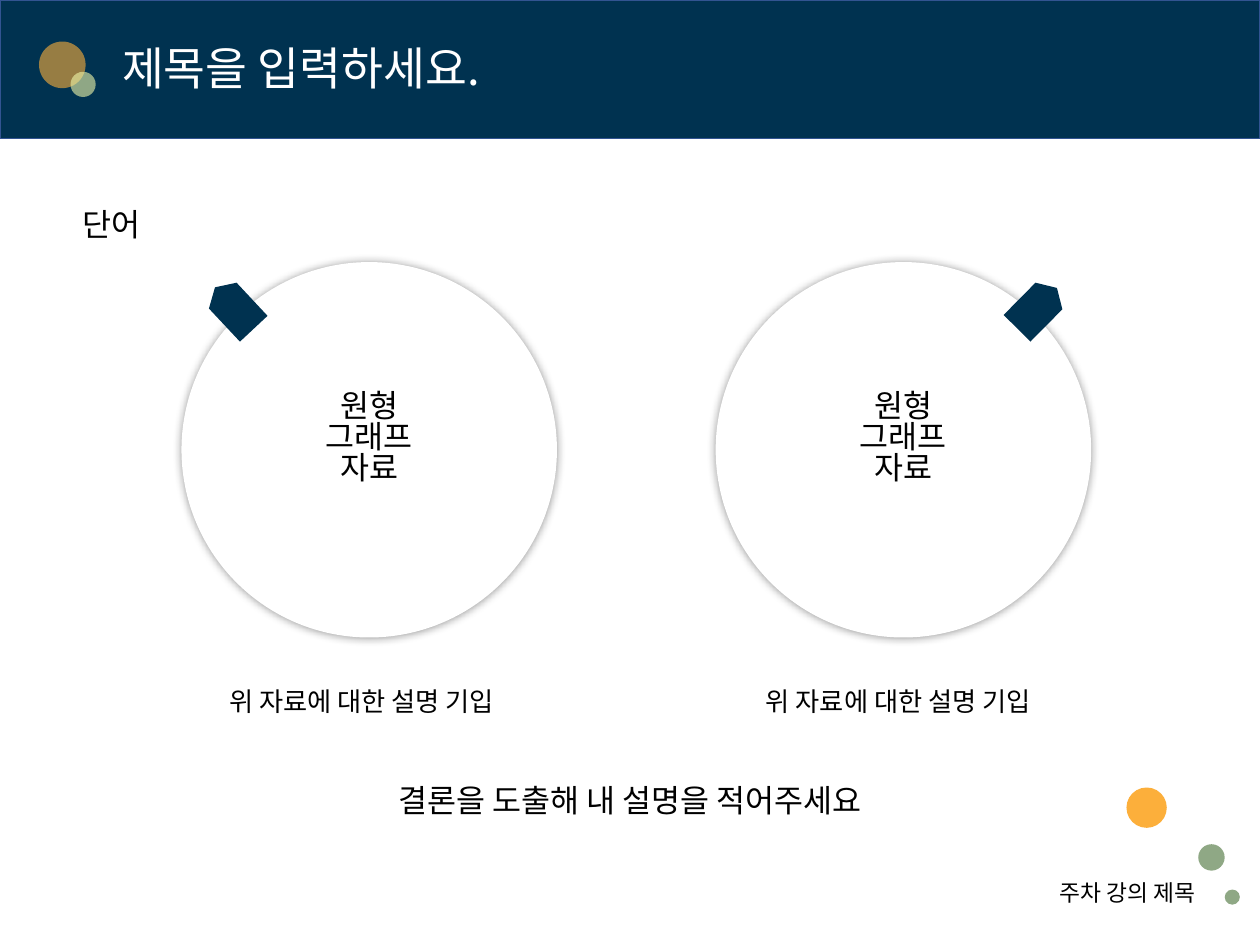
"""Build a lecture slide with two circular chart areas and a conclusion."""
from lxml import etree
from pptx import Presentation
from pptx.dml.color import RGBColor
from pptx.enum.shapes import MSO_SHAPE
from pptx.enum.text import MSO_ANCHOR, PP_ALIGN
from pptx.oxml.ns import qn
from pptx.util import Inches, Pt

FONT = "Noto Sans CJK KR"
COLORS = {"navy": "003250", "edge": "325491", "orange": "FCAF3B", "lemon": "EFF6A9",
          "green": "8FA885", "white": "FFFFFF", "black": "000000"}
TITLE = "제목을 입력하세요."
TOPIC = "단어"
CHART_LABEL = ["원형", "그래프", "자료"]
CAPTION = "위 자료에 대한 설명 기입"
CONCLUSION = "결론을 도출해 내 설명을 적어주세요"
FOOTER = "주차 강의 제목"
TITLE_DOTS = [(0.31, 0.33, 0.37, "orange"), (0.56, 0.57, 0.2, "lemon")]
CORNER_DOTS = [(8.94, 6.25, 0.32, "orange"), (9.51, 6.7, 0.21, "green"),
               (9.72, 7.06, 0.12, "green")]
CHARTS = [{"left": 1.44, "tab": 1.71, "turn": 136.9, "caption": 1.72},
          {"left": 5.68, "tab": 8.08, "turn": 224.7, "caption": 5.98}]
DIAMETER = 2.98
LABEL_WIDTH = 0.9


def rgb(name):
    return RGBColor.from_string(COLORS[name])


def add_shape(shapes, kind, box, fill, line=None, alpha=None):
    sp = shapes.add_shape(kind, *map(Inches, box))
    sp.shadow.inherit = False
    sp.fill.solid()
    sp.fill.fore_color.rgb = rgb(fill)
    if alpha:
        clr = sp.fill._xPr.find(qn("a:solidFill"))[0]
        etree.SubElement(clr, qn("a:alpha"), val=str(alpha * 1000))
    if line:
        sp.line.color.rgb = rgb(line)
        sp.line.width = Pt(1)
    else:
        sp.line.fill.background()
    return sp


def add_glow(sp, blur, alpha):
    effects = sp._element.spPr.find(qn("a:effectLst"))
    shadow = etree.SubElement(effects, qn("a:outerShdw"), blurRad=str(Pt(blur)),
                              dist="0", dir="0", algn="ctr", rotWithShape="0")
    clr = etree.SubElement(shadow, qn("a:srgbClr"), val=COLORS["black"])
    etree.SubElement(clr, qn("a:alpha"), val=str(alpha * 1000))


def add_text(shapes, lines, box, size=18, color="black", align=PP_ALIGN.LEFT,
             anchor=MSO_ANCHOR.TOP, wrap=False, spacing=0.82):
    tf = shapes.add_textbox(*map(Inches, box)).text_frame
    tf.word_wrap = wrap
    tf.vertical_anchor = anchor
    for i, line in enumerate(lines):
        p = tf.paragraphs[0] if i == 0 else tf.add_paragraph()
        p.alignment = align
        p.line_spacing = spacing
        r = p.add_run()
        r.text = line
        r.font.size = Pt(size)
        r.font.name = FONT
        r.font.color.rgb = rgb(color)
        etree.SubElement(r.font._element, qn("a:ea"), typeface=FONT)


def add_chart_area(shapes, chart):
    group = shapes.add_group_shape().shapes
    disc = add_shape(group, MSO_SHAPE.OVAL, (chart["left"], 2.08, DIAMETER, DIAMETER), "white")
    add_glow(disc, blur=5, alpha=40)
    tab = add_shape(group, MSO_SHAPE.FLOWCHART_OFFPAGE_CONNECTOR,
                    (chart["tab"], 2.22, 0.3, 0.45), "navy")
    tab.rotation = chart["turn"]
    label_left = chart["left"] + (DIAMETER - LABEL_WIDTH) / 2
    add_text(shapes, CHART_LABEL, (label_left, 3.07, LABEL_WIDTH, 1.01), align=PP_ALIGN.CENTER)
    add_text(shapes, [CAPTION], (chart["caption"], 5.43, 2.42, 0.35), size=15)


def main():
    prs = Presentation()
    prs.slide_width, prs.slide_height = Inches(10), Inches(7.5)
    shapes = prs.slides.add_slide(prs.slide_layouts[6]).shapes

    add_shape(shapes, MSO_SHAPE.RECTANGLE, (0, 0, 10, 1.1), "navy", line="edge")
    group = shapes.add_group_shape().shapes
    for x, y, d, color in TITLE_DOTS:
        add_shape(group, MSO_SHAPE.OVAL, (x, y, d, d), color, alpha=60)
    add_text(shapes, [TITLE], (0.87, 0.28, 5.71, 0.53), size=26, color="white",
             anchor=MSO_ANCHOR.BOTTOM, wrap=True, spacing=0.9)
    for x, y, d, color in CORNER_DOTS:
        add_shape(shapes, MSO_SHAPE.OVAL, (x, y, d, d), color)

    add_text(shapes, [TOPIC], (0.56, 1.63, 0.66, 0.4))
    for chart in CHARTS:
        add_chart_area(shapes, chart)
    add_text(shapes, [CONCLUSION], (2.99, 6.2, 4.02, 0.4), align=PP_ALIGN.CENTER)
    add_text(shapes, [FOOTER], (8.28, 6.96, 1.34, 0.31), size=13,
             align=PP_ALIGN.CENTER, wrap=True)
    prs.save("out.pptx")


if __name__ == "__main__":
    main()
